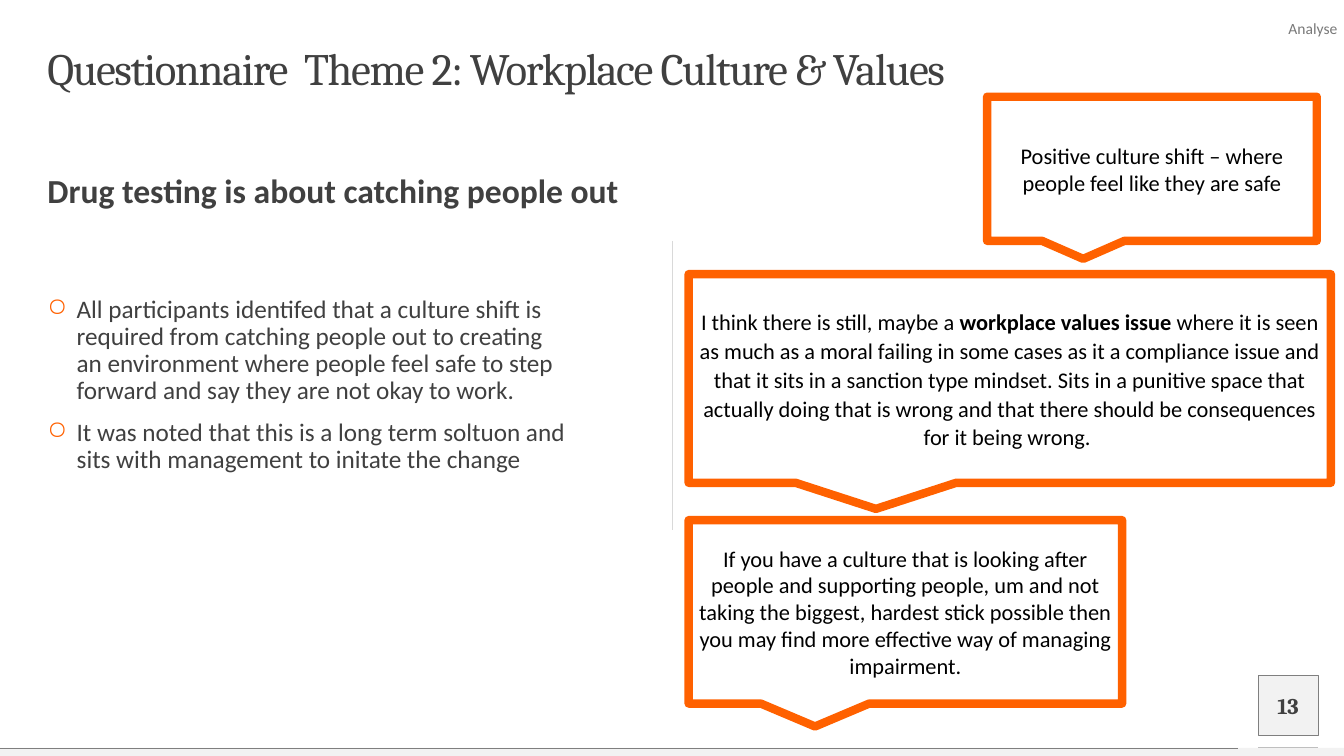
from pptx import Presentation
from pptx.util import Inches, Pt
from pptx.dml.color import RGBColor
from pptx.enum.shapes import MSO_SHAPE as Shape, MSO_CONNECTOR as Line
from pptx.enum.text import PP_ALIGN as Align, MSO_ANCHOR as Anchor, MSO_AUTO_SIZE as Auto
from pptx.oxml.ns import qn
from lxml.etree import SubElement as Sub


def tint(color):
    return RGBColor.from_string(color)


def write(item, paras, size, color, face="Calibri", bold=False, align=Align.LEFT,
          anchor=Anchor.TOP, inset=0, space=1.0, before=0, after=0):
    frame = item.text_frame
    frame.word_wrap = True
    frame.auto_size = Auto.NONE
    frame.vertical_anchor = anchor
    frame.margin_left = frame.margin_right = Inches(inset)
    frame.margin_top = frame.margin_bottom = Inches(inset / 2)
    for i, text in enumerate(paras):
        para = frame.add_paragraph() if i else frame.paragraphs[0]
        para.alignment = align
        para.line_spacing = space
        para.space_before, para.space_after = Pt(before), Pt(after)
        para.font.name, para.font.size = face, Pt(size)
        para.font.color.rgb = tint(color)
        para.font.bold = bold
        for n, part in enumerate(text.split("**")):
            run = para.add_run()
            run.text = part
            if n % 2:
                run.font.bold = True
    return frame


ORANGE, DARK, PALE = "FF6100", "404040", "F2F2F2"

deck = Presentation()
deck.slide_width, deck.slide_height = Inches(13.33), Inches(7.5)
slide = deck.slides.add_slide(deck.slide_layouts[5])
shapes = slide.shapes

for x, y, w, h, edge in [(12.48, 6.7, 0.59, 0.59, "7F7F7F"), (0, 7.42, 13.33, 0.08, None)]:
    box = shapes.add_shape(Shape.RECTANGLE, Inches(x), Inches(y), Inches(w), Inches(h))
    box.shadow.inherit = False
    box.fill.solid()
    box.fill.fore_color.rgb = tint(PALE)
    if edge:
        box.line.color.rgb = tint(edge)
        box.line.width = Pt(0.25)
    else:
        box.line.fill.background()

for x1, y1, x2, y2, color, width in [
    (12.48, 7.41, 13.07, 7.41, "BFBFBF", 0.5),
    (0, 7.42, 12.28, 7.42, "7F7F7F", 0.25),
    (6.67, 2.39, 6.67, 5.26, "D9D9D9", 0.5),
]:
    rule = shapes.add_connector(Line.STRAIGHT, Inches(x1), Inches(y1), Inches(x2), Inches(y2))
    rule.line.color.rgb = tint(color)
    rule.line.width = Pt(width)
    Sub(rule._element.spPr, qn("a:effectLst"))

title = shapes.title
title.left, title.top = Inches(0.47), Inches(0.47)
title.width, title.height = Inches(9.67), Inches(0.47)
frame = write(title, ["Questionnaire  Theme 2: Workplace Culture & Values"], 32, DARK,
              face="Cambria", anchor=Anchor.MIDDLE, space=0.9)
frame.paragraphs[0].runs[0]._r.get_or_add_rPr().set("spc", "-100")

head = shapes.add_textbox(Inches(0.47), Inches(1.73), Inches(5.71), Inches(0.65))
write(head, ["Drug testing is about catching people out"], 24, DARK, bold=True,
      space=0.9, before=10)

body = shapes.add_textbox(Inches(0.47), Inches(2.94), Inches(5.22), Inches(2.59))
points = [
    "All participants identifed that a culture shift is required from catching people out "
    "to creating an environment where people feel safe to step forward and say they are "
    "not okay to work.",
    "It was noted that this is a long term soltuon and sits with management to initate the change",
]
frame = write(body, points, 18, DARK, space=0.9, before=10)
for para in frame.paragraphs:
    props = para._p.get_or_add_pPr()
    props.set("marL", str(Inches(0.29)))
    props.set("indent", str(-Inches(0.29)))
    hue = props.makeelement(qn("a:buClr"))
    Sub(hue, qn("a:srgbClr"), val=ORANGE)
    mark = props.makeelement(qn("a:buChar"), char="○")
    last = props.find(qn("a:defRPr"))
    last.addprevious(hue)
    last.addprevious(mark)

page = shapes.add_textbox(Inches(12.48), Inches(6.8), Inches(0.59), Inches(0.4))
write(page, ["13"], 16, DARK, face="Cambria", bold=True, align=Align.CENTER, anchor=Anchor.MIDDLE)

quotes = [
    (9.79, 0.96, 3.27, 1.43, 1.0, 0,
     "Positive culture shift – where people feel like they are safe"),
    (6.83, 2.72, 6.37, 2.07, 1.07, 8,
     "I think there is still, maybe a **workplace values issue** where it is seen as much as "
     "a moral failing in some cases as it a compliance issue and that it sits in a sanction "
     "type mindset. Sits in a punitive space that actually doing that is wrong and that "
     "there should be consequences for it being wrong. "),
    (6.83, 5.16, 4.3, 1.82, 1.0, 0,
     "If you have a culture that is looking after people and supporting people, um and not "
     "taking the biggest, hardest stick possible then you may find more effective way of "
     "managing impairment."),
]
for x, y, w, h, space, after, text in quotes:
    quote = shapes.add_shape(Shape.RECTANGULAR_CALLOUT, Inches(x), Inches(y), Inches(w), Inches(h))
    quote.shadow.inherit = False
    quote.fill.solid()
    quote.fill.fore_color.rgb = tint("FFFFFF")
    quote.line.color.rgb = tint(ORANGE)
    quote.line.width = Pt(6)
    write(quote, [text], 16, "000000", align=Align.CENTER, anchor=Anchor.MIDDLE,
          inset=0.1, space=space, after=after)

tag = shapes.add_textbox(Inches(12.68), Inches(0.19), Inches(0.76), Inches(0.24))
write(tag, ["Analyse"], 11.1, "797979", inset=0.1, space=0.7, before=10)

deck.save("out.pptx")
